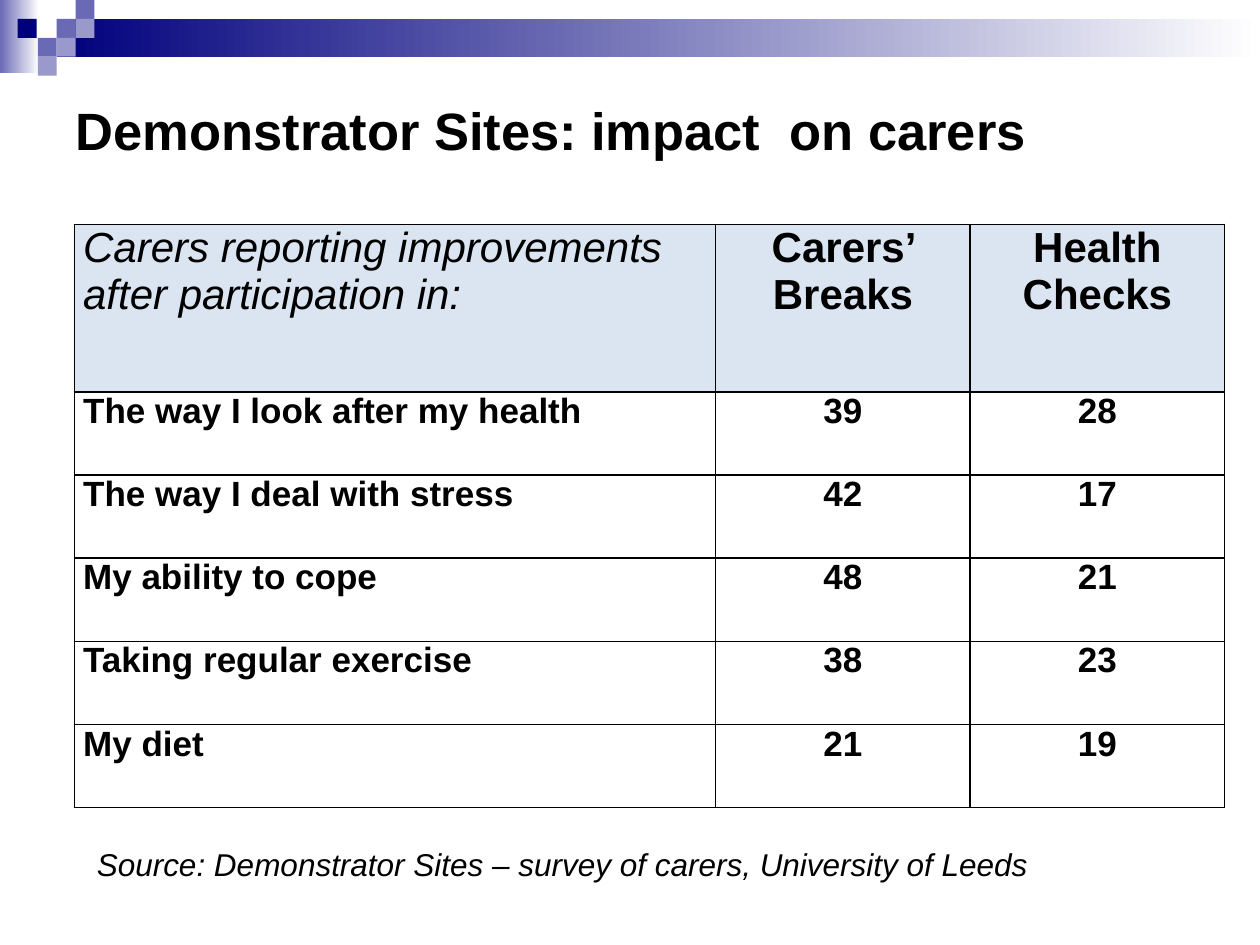
from dataclasses import dataclass

from lxml.etree import SubElement
from pptx import Presentation
from pptx.dml.color import RGBColor
from pptx.enum.shapes import MSO_SHAPE
from pptx.enum.text import MSO_ANCHOR, MSO_AUTO_SIZE, PP_ALIGN
from pptx.oxml.ns import qn
from pptx.util import Inches, Pt


@dataclass(frozen=True)
class Theme:
    font: str = "Arial"
    text: str = "000000"
    border: str = "000000"
    navy: str = "00007D"
    violet: str = "6969B5"
    lilac: str = "9999CC"
    white: str = "FFFFFF"
    header: str = "DBE5F1"
    title_size: int = 30
    header_size: int = 24
    cell_size: int = 20
    source_size: int = 18


class SlideBuilder:
    def __init__(self, page, theme):
        self.page = page
        self.theme = theme

    def style(self, para, size, bold=False, italic=False, align=PP_ALIGN.LEFT):
        font = para.font
        font.name, font.size = self.theme.font, Pt(size)
        font.bold, font.italic = bold, italic
        font.color.rgb = RGBColor.from_string(self.theme.text)
        para.alignment = align

    def rectangle(self, left, top, width, height, color, fade_to=None):
        shape = self.page.shapes.add_shape(
            MSO_SHAPE.RECTANGLE, Inches(left), Inches(top), Inches(width), Inches(height))
        shape.shadow.inherit = False
        shape.line.fill.background()
        if fade_to:
            shape.fill.gradient()
            shape.fill.gradient_angle = 0
            for stop, position, shade in zip(shape.fill.gradient_stops, (0, 1), (color, fade_to)):
                stop.position = position
                stop.color.rgb = RGBColor.from_string(shade)
        else:
            shape.fill.solid()
            shape.fill.fore_color.rgb = RGBColor.from_string(color)

    def title(self, text, left, top, width, height):
        box = self.page.shapes.title
        box.left, box.top = Inches(left), Inches(top)
        box.width, box.height = Inches(width), Inches(height)
        frame = box.text_frame
        frame.text = text
        frame.auto_size = MSO_AUTO_SIZE.NONE
        frame.vertical_anchor = MSO_ANCHOR.MIDDLE
        self.style(frame.paragraphs[0], self.theme.title_size, bold=True)

    def text(self, text, left, top, width, height):
        box = self.page.shapes.add_textbox(
            Inches(left), Inches(top), Inches(width), Inches(height))
        frame = box.text_frame
        frame.word_wrap = False
        frame.auto_size = MSO_AUTO_SIZE.SHAPE_TO_FIT_TEXT
        frame.text = text
        self.style(frame.paragraphs[0], self.theme.source_size, italic=True)

    def cell_borders(self, cell):
        properties = cell._tc.get_or_add_tcPr()
        for index, side in enumerate(("lnL", "lnR", "lnT", "lnB")):
            line = properties.makeelement(qn(f"a:{side}"), {"w": str(Pt(1))})
            fill = SubElement(line, qn("a:solidFill"))
            SubElement(fill, qn("a:srgbClr"), {"val": self.theme.border})
            properties.insert(index, line)

    def table(self, rows, left, top, widths, heights):
        table = self.page.shapes.add_table(
            len(rows), len(widths), Inches(left), Inches(top),
            Inches(sum(widths)), Inches(sum(heights))).table
        table.first_row = table.horz_banding = False
        for column, width in zip(table.columns, widths):
            column.width = Inches(width)
        for row, height in zip(table.rows, heights):
            row.height = Inches(height)
        for row_index, values in enumerate(rows):
            for column_index, value in enumerate(values):
                self.fill_cell(table.cell(row_index, column_index), value,
                               row_index == 0, column_index == 0)

    def fill_cell(self, cell, value, is_header, is_label):
        cell.text = str(value)
        cell.margin_left = cell.margin_right = Inches(0.07)
        cell.margin_top = cell.margin_bottom = 0
        if is_header:
            cell.fill.solid()
            cell.fill.fore_color.rgb = RGBColor.from_string(self.theme.header)
        else:
            cell.fill.background()
        self.cell_borders(cell)
        if not is_label:
            align = PP_ALIGN.CENTER
        else:
            align = PP_ALIGN.LEFT if is_header else PP_ALIGN.JUSTIFY
        size = self.theme.header_size if is_header else self.theme.cell_size
        corner = is_header and is_label
        para = cell.text_frame.paragraphs[0]
        para.space_before = Pt(6)
        self.style(para, size, bold=not corner, italic=corner, align=align)


def main():
    deck = Presentation()
    deck.slide_width, deck.slide_height = Inches(10), Inches(7.5)
    theme = Theme()
    page = deck.slides.add_slide(deck.slide_layouts.get_by_name("Title Only"))
    builder = SlideBuilder(page, theme)

    # Fading bands at the top
    builder.rectangle(0, 0, 0.31, 0.58, theme.violet, fade_to=theme.white)
    builder.rectangle(0.45, 0.15, 9.55, 0.3, theme.navy, fade_to=theme.white)

    # Checker squares
    side = 0.15
    squares = [
        (0.45, 0.15, theme.violet), (0.6, 0, theme.violet), (0.6, 0.15, theme.lilac),
        (0.3, 0.3, theme.violet), (0.14, 0.15, theme.navy),
        (0.45, 0.3, theme.lilac), (0.3, 0.45, theme.lilac),
    ]
    for left, top, color in squares:
        builder.rectangle(left, top, side, side, color)

    # Title
    builder.title("Demonstrator Sites: impact  on carers", 0.5, 0.5, 9, 1.05)

    # Survey results
    rows = [
        ("Carers reporting improvements after participation in:", "Carers’ Breaks", "Health Checks"),
        ("The way I look after my health", 39, 28),
        ("The way I deal with stress", 42, 17),
        ("My ability to cope", 48, 21),
        ("Taking regular exercise", 38, 23),
        ("My diet", 21, 19),
    ]
    heights = [1.33] + [0.66] * (len(rows) - 1)
    builder.table(rows, 0.59, 1.78, (5.09, 2.02, 2.02), heights)

    # Source line
    builder.text("Source: Demonstrator Sites – survey of carers, University of Leeds",
                 0.67, 6.66, 7.66, 0.4)

    deck.save("out.pptx")


if __name__ == "__main__":
    main()
